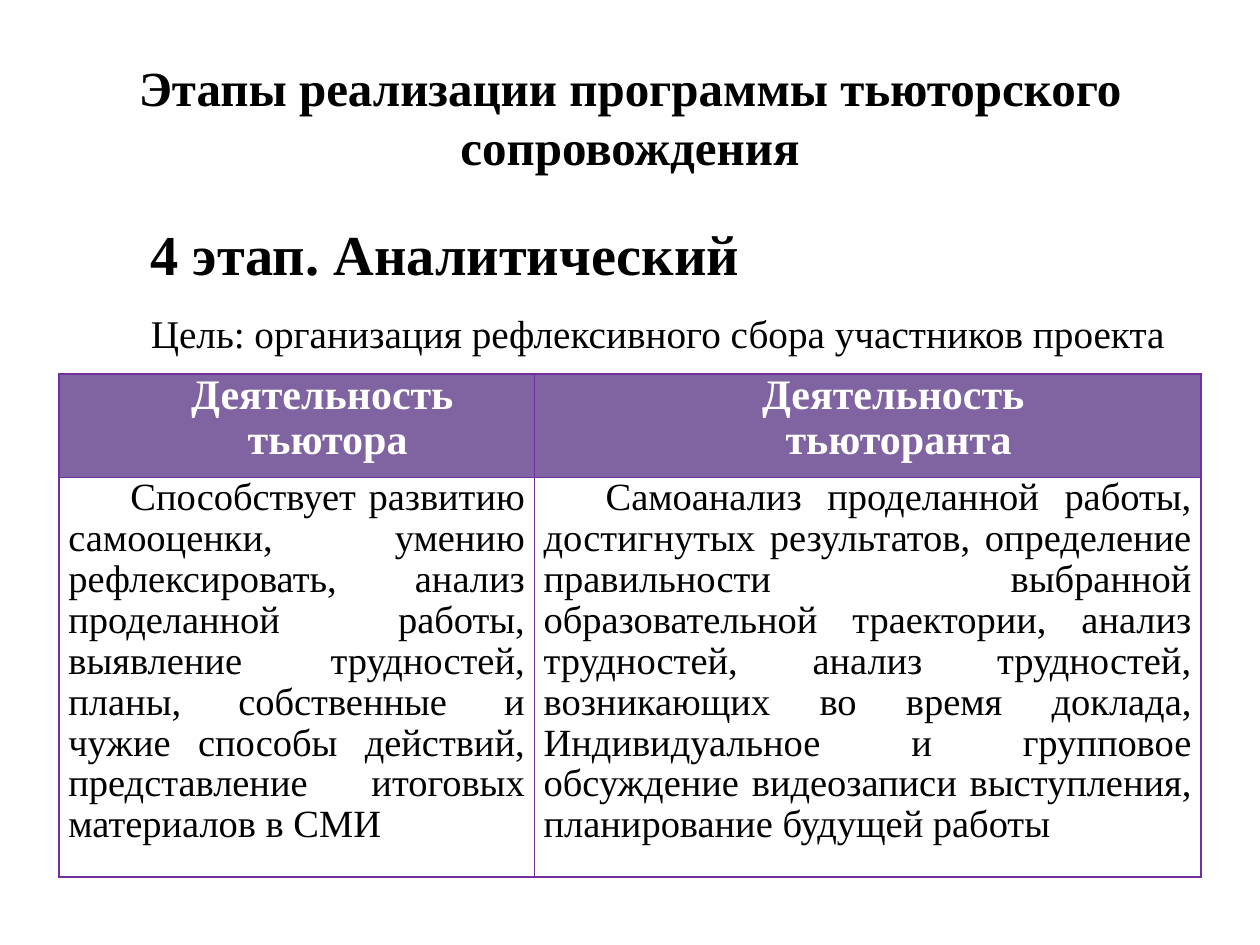
from lxml.etree import SubElement
from pptx import Presentation
from pptx.dml.color import RGBColor
from pptx.enum.text import MSO_ANCHOR as Anchor, PP_ALIGN as Align
from pptx.oxml.ns import qn
from pptx.util import Cm, Pt

COLORS = {"text": "000000", "header_text": "FFFFFF",
          "header_fill": "8064A2", "body_fill": "FFFFFF", "border": "7030A0"}
FONT = "Times New Roman"
TITLE = "Этапы реализации программы тьюторского сопровождения"
STAGE = "4 этап. Аналитический"
GOAL = "Цель: организация рефлексивного сбора участников проекта"
HEADERS = [["Деятельность ", "тьютора"], ["Деятельность ", "тьюторанта"]]
ACTIVITIES = [
    "Способствует развитию самооценки, умению рефлексировать, анализ "
    "проделанной работы, выявление трудностей, планы, собственные и чужие "
    "способы действий, представление итоговых материалов в СМИ",
    "Самоанализ проделанной работы, достигнутых результатов, определение "
    "правильности выбранной образовательной траектории, анализ трудностей, "
    "анализ трудностей, возникающих во время доклада, Индивидуальное и "
    "групповое обсуждение видеозаписи выступления, планирование будущей работы",
]


def color(name):
    return RGBColor.from_string(COLORS[name])


def write(paragraph, text, size=22, bold=False, ink="text", align=Align.LEFT,
          indent=0, before=0, spacing=1.0):
    properties = paragraph._p.get_or_add_pPr()
    properties.set("marL", "0")
    properties.set("indent", str(Cm(indent)))
    paragraph.alignment = align
    paragraph.line_spacing = spacing
    paragraph.space_before = Pt(before)
    run = paragraph.add_run()
    run.text = text
    run.font.name = FONT
    run.font.size = Pt(size)
    run.font.bold = bold
    run.font.color.rgb = color(ink)


def add_title(slide):
    title = slide.shapes.title
    title.left, title.top, title.width, title.height = (
        Cm(1.27), Cm(0.76), Cm(22.86), Cm(3.18))
    title.text_frame.vertical_anchor = Anchor.MIDDLE
    write(title.text_frame.paragraphs[0], TITLE, size=28, bold=True,
          align=Align.CENTER)


def add_stage(slide):
    stage = slide.shapes.add_textbox(Cm(1.27), Cm(4.29), Cm(22.86), Cm(3.6))
    frame = stage.text_frame
    frame.word_wrap = True
    write(frame.paragraphs[0], STAGE, size=32.2, bold=True, indent=1.52)
    write(frame.add_paragraph(), GOAL, size=22.4, indent=1.52, before=13)


def format_cell(cell, fill):
    cell.margin_left = cell.margin_right = Cm(0.19)
    cell.margin_top = cell.margin_bottom = 0
    # Borders come before the fill in the cell properties
    properties = cell._tc.get_or_add_tcPr()
    for side in ("a:lnL", "a:lnR", "a:lnT", "a:lnB"):
        line = SubElement(properties, qn(side), w=str(Pt(1)))
        solid = SubElement(line, qn("a:solidFill"))
        SubElement(solid, qn("a:srgbClr"), val=COLORS["border"])
    cell.fill.solid()
    cell.fill.fore_color.rgb = color(fill)


def add_activities(slide):
    table = slide.shapes.add_table(
        2, 2, Cm(1.19), Cm(7.54), Cm(23.02), Cm(9.81)).table
    table.columns[0].width, table.columns[1].width = Cm(9.58), Cm(13.44)
    table.rows[0].height, table.rows[1].height = Cm(2.09), Cm(7.24)

    for column, (header, activity) in enumerate(zip(HEADERS, ACTIVITIES)):
        head, body = table.cell(0, column), table.cell(1, column)
        format_cell(head, "header_fill")
        format_cell(body, "body_fill")
        head.text_frame.add_paragraph()
        for paragraph, line in zip(head.text_frame.paragraphs, header):
            write(paragraph, line, size=24, bold=True, ink="header_text",
                  align=Align.CENTER, indent=1.25, spacing=0.96)
        write(body.text_frame.paragraphs[0], activity, align=Align.JUSTIFY,
              indent=1.25, spacing=0.96)


def main():
    deck = Presentation()
    deck.slide_width, deck.slide_height = Cm(25.4), Cm(19.05)
    slide = deck.slides.add_slide(deck.slide_layouts[5])
    add_title(slide)
    add_stage(slide)
    add_activities(slide)
    deck.save("out.pptx")


if __name__ == "__main__":
    main()
